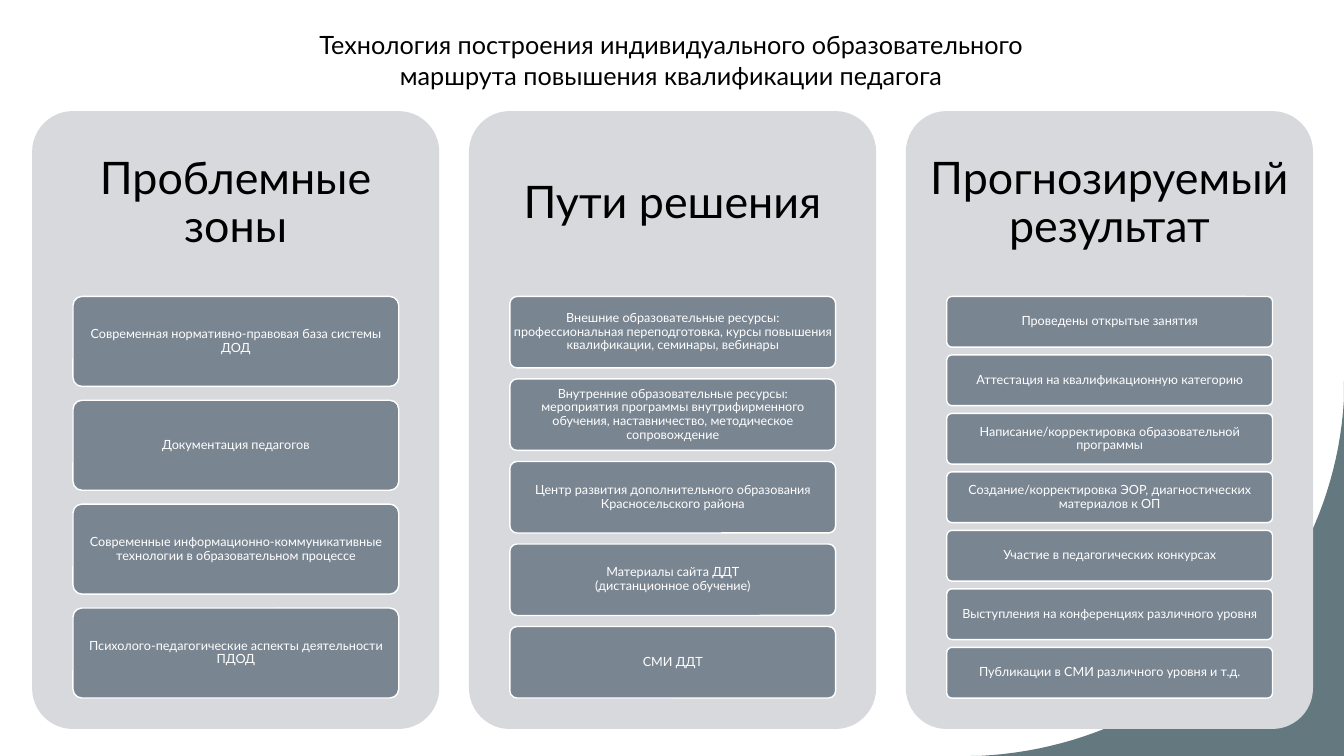
from pptx import Presentation
from pptx.dml.color import RGBColor
from pptx.enum import shapes, text
from pptx.util import Cm, Pt

BLACK = RGBColor(0, 0, 0)
WHITE = RGBColor(0xFF, 0xFF, 0xFF)
PANEL = RGBColor(0xD7, 0xD9, 0xDC)
SLATE = RGBColor(0x7A, 0x85, 0x92)
TEAL = RGBColor(0x63, 0x78, 0x7F)

TITLE = ("Технология построения индивидуального образовательного "
         "маршрута повышения квалификации педагога")
COLUMNS = [
    ("Проблемные зоны", [
        "Современная нормативно-правовая база системы ДОД",
        "Документация педагогов",
        "Современные информационно-коммуникативные технологии "
        "в образовательном процессе",
        "Психолого-педагогические аспекты деятельности ПДОД",
    ]),
    ("Пути решения", [
        "Внешние образовательные ресурсы: профессиональная переподготовка, "
        "курсы повышения квалификации, семинары, вебинары",
        "Внутренние образовательные ресурсы:\nмероприятия программы "
        "внутрифирменного обучения, наставничество, методическое сопровождение",
        "Центр развития дополнительного образования Красносельского района",
        "Материалы сайта ДДТ\n(дистанционное обучение)",
        "СМИ ДДТ",
    ]),
    ("Прогнозируемый результат", [
        "Проведены открытые занятия",
        "Аттестация на квалификационную категорию",
        "Написание/корректировка образовательной программы",
        "Создание/корректировка ЭОР, диагностических материалов к ОП",
        "Участие в педагогических конкурсах",
        "Выступления на конференциях различного уровня",
        "Публикации в СМИ различного уровня и т.д.",
    ]),
]


def write(shape, words, size, color, inset, spacing=0.9):
    frame = shape.text_frame
    frame.word_wrap = True
    frame.auto_size = text.MSO_AUTO_SIZE.NONE
    frame.vertical_anchor = text.MSO_ANCHOR.MIDDLE
    frame.margin_left = frame.margin_right = Cm(inset)
    frame.margin_top = frame.margin_bottom = Cm(inset)
    para = frame.paragraphs[0]
    para.text = words
    para.alignment = text.PP_ALIGN.CENTER
    para.line_spacing = spacing
    para.font.name = "Lato"
    para.font.size = Pt(size)
    para.font.color.rgb = color


def rounded(left, top, width, height, fill):
    shape = slide.shapes.add_shape(
        shapes.MSO_SHAPE.ROUNDED_RECTANGLE,
        Cm(left), Cm(top), Cm(width), Cm(height))
    shape.adjustments[0] = 0.1
    shape.shadow.inherit = False
    shape.fill.solid()
    shape.fill.fore_color.rgb = fill
    shape.line.fill.background()
    return shape


deck = Presentation()
deck.slide_width, deck.slide_height = Cm(33.87), Cm(19.05)
slide = deck.slides.add_slide(deck.slide_layouts[5])

# Curved corner: points along a cubic curve, closed at the slide corner
curve = [(24.66, 19.05), (29.64, 18.82), (33.6, 14.91), (33.87, 10.06)]
STEPS = 48
points = []
for step in range(STEPS + 1):
    t = step / STEPS
    parts = ((1 - t) ** 3, 3 * t * (1 - t) ** 2, 3 * t ** 2 * (1 - t), t ** 3)
    points.append(tuple(Cm(sum(k * p[axis] for k, p in zip(parts, curve)))
                        for axis in (0, 1)))
points += [(Cm(33.87), Cm(9.6)), (Cm(33.87), Cm(19.05)), (Cm(24.46), Cm(19.05))]
outline = slide.shapes.build_freeform(*points[0])
outline.add_line_segments(points[1:])
corner = outline.convert_to_shape()
corner.shadow.inherit = False
corner.fill.solid()
corner.fill.fore_color.rgb = TEAL
corner.line.fill.background()

# Title
title = slide.shapes.title
title.left, title.top, title.width, title.height = (
    Cm(6.4), Cm(0.61), Cm(21.03), Cm(1.8))
write(title, TITLE, 18, BLACK, 0.13, 1)

# Three panels, each with a heading and a stack of boxes
TOP, WIDE = 2.8, 10.26
STACK, TALL = 7.47, 10.12
GAP = 2 / 13  # share of a box height
for col, (head, items) in enumerate(COLUMNS):
    left = 0.81 + 11.01 * col
    rounded(left, TOP, WIDE, 15.57, PANEL)
    label = slide.shapes.add_textbox(Cm(left), Cm(TOP), Cm(WIDE), Cm(4.67))
    write(label, head, 32, BLACK, 0.33)

    count = len(items)
    height = TALL / (count + (count - 1) * GAP)
    for row, item in enumerate(items):
        box = rounded(left + 1.03, STACK + row * height * (1 + GAP),
                      8.21, height, SLATE)
        box.line.color.rgb = WHITE
        box.line.width = Pt(1)
        write(box, item, 9, WHITE, 0)

deck.save("out.pptx")
